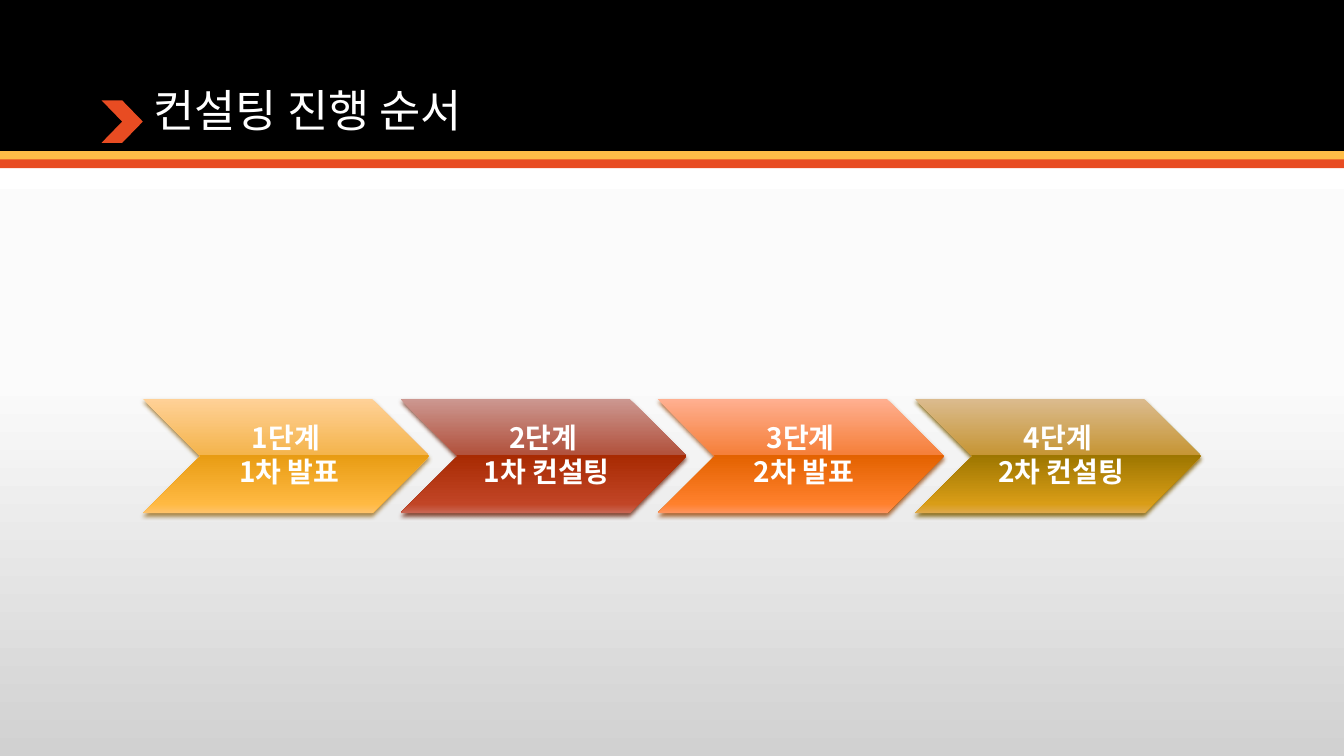
from lxml import etree
from pptx import Presentation
from pptx import util as u
from pptx.dml.color import RGBColor
from pptx.enum import shapes, text
from pptx.oxml.ns import qn

FONT = "Noto Sans CJK KR"
BLACK = RGBColor(0x00, 0x00, 0x00)
WHITE = RGBColor(0xFF, 0xFF, 0xFF)
AMBER = RGBColor(0xFF, 0xBD, 0x47)
ORANGE = RGBColor(0xE8, 0x4C, 0x22)

BACKDROP = [(0, "FFFFFF"), (50, "FBFBFB"), (100, "D1D1D1")]
GLOSS_POSITIONS = (0, 49, 49, 92, 100)

# Label lines, gloss colours from top to bottom, shadow colour
STEPS = [
    ("1단계 \n1차 발표", "FFD197 F4B44C E89C13 FFB942 FFC36A", "9D752C"),
    ("2단계 \n1차 컨설팅", "CC9790 B1513C A82A02 C14526 C96654", "702D17"),
    ("3단계 \n2차 발표", "FFAF90 F57F39 E36200 FF802C FF945E", "9D5218"),
    ("4단계 \n2차 컨설팅", "DBBB8E C69534 9D7600 D99D17 DFA94C", "7E5E00"),
]
STEP_LEFT, STEP_TOP, STEP_PITCH = 3.61, 10.06, 6.485
STEP_WIDTH, STEP_HEIGHT = 7.21, 2.87


def add_colour(parent, colour):
    return etree.SubElement(parent, qn("a:srgbClr"), val=colour)


def set_gradient(fill, element, stops):
    """Fill from top to bottom with (percent, colour) stops."""
    fill.gradient()
    fill.gradient_angle = 270
    stop_list = element.find(".//" + qn("a:gsLst"))
    for old_stop in list(stop_list):
        stop_list.remove(old_stop)
    for percent, colour in stops:
        stop = etree.SubElement(stop_list, qn("a:gs"), pos=str(percent * 1000))
        add_colour(stop, colour)


class SlideBuilder:
    def __init__(self, slide, font=FONT):
        self.slide = slide
        self.font = font

    def background(self, stops):
        set_gradient(self.slide.background.fill, self.slide._element, stops)

    def shape(self, kind, left, top, width, height, colour=None):
        shape = self.slide.shapes.add_shape(
            kind, u.Cm(left), u.Cm(top), u.Cm(width), u.Cm(height))
        shape.shadow.inherit = False
        shape.line.fill.background()
        if colour is not None:
            shape.fill.solid()
            shape.fill.fore_color.rgb = colour
        return shape

    def format_text(self, frame, size, bold, alignment, space_after=0):
        for paragraph in frame.paragraphs:
            paragraph.alignment = alignment
            paragraph.line_spacing = 0.9
            paragraph.space_after = u.Pt(space_after)
            for run in paragraph.runs:
                run.font.size = u.Pt(size)
                run.font.bold = bold
                run.font.color.rgb = WHITE
                run.font.name = self.font
                etree.SubElement(run.font._element, qn("a:ea"), typeface=self.font)

    def title(self, wording, left, top, width, height):
        title = self.slide.shapes.title
        title.left, title.top = u.Cm(left), u.Cm(top)
        title.width, title.height = u.Cm(width), u.Cm(height)
        frame = title.text_frame
        frame.text = wording
        frame.word_wrap = True
        frame.auto_size = text.MSO_AUTO_SIZE.NONE
        frame.vertical_anchor = text.MSO_ANCHOR.BOTTOM
        self.format_text(frame, 32, False, text.PP_ALIGN.LEFT)
        # Bring the title in front of the header band
        self.slide.shapes._spTree.append(title._element)

    def shadow(self, shape, colour):
        effects = shape._element.spPr.find(qn("a:effectLst"))
        shadow = etree.SubElement(
            effects, qn("a:outerShdw"), blurRad=str(u.Pt(3.1)),
            dist=str(u.Pt(2)), dir="5400000", rotWithShape="0")
        etree.SubElement(add_colour(shadow, colour), qn("a:alpha"), val="83000")

    def step(self, wording, left, colours, shadow_colour):
        """Add a glossy chevron with its label."""
        chevron = self.shape(shapes.MSO_SHAPE.CHEVRON, left, STEP_TOP,
                             STEP_WIDTH, STEP_HEIGHT)
        set_gradient(chevron.fill, chevron._element,
                     zip(GLOSS_POSITIONS, colours.split()))
        self.shadow(chevron, shadow_colour)
        frame = chevron.text_frame
        frame.text = wording
        frame.word_wrap = True
        frame.vertical_anchor = text.MSO_ANCHOR.MIDDLE
        frame.margin_left = u.Cm(0.23)
        frame.margin_right = frame.margin_top = frame.margin_bottom = u.Cm(0.08)
        self.format_text(frame, 20, True, text.PP_ALIGN.CENTER, space_after=2.5)


def main():
    presentation = Presentation()
    presentation.slide_width, presentation.slide_height = u.Cm(33.87), u.Cm(19.05)
    slide = presentation.slides.add_slide(presentation.slide_layouts[5])
    builder = SlideBuilder(slide)
    builder.background(BACKDROP)

    for top, height, colour in [(0, 3.81, BLACK), (3.81, 0.22, AMBER),
                                (4.02, 0.22, ORANGE)]:
        builder.shape(shapes.MSO_SHAPE.RECTANGLE, 0, top, 33.87, height, colour)
    builder.shape(shapes.MSO_SHAPE.CHEVRON, 2.56, 2.53, 1.04, 1.07, ORANGE)
    builder.title("컨설팅 진행 순서", 3.61, 0.71, 26.67, 2.87)

    for index, (wording, colours, shadow_colour) in enumerate(STEPS):
        builder.step(wording, STEP_LEFT + index * STEP_PITCH, colours, shadow_colour)

    presentation.save("out.pptx")


if __name__ == "__main__":
    main()
